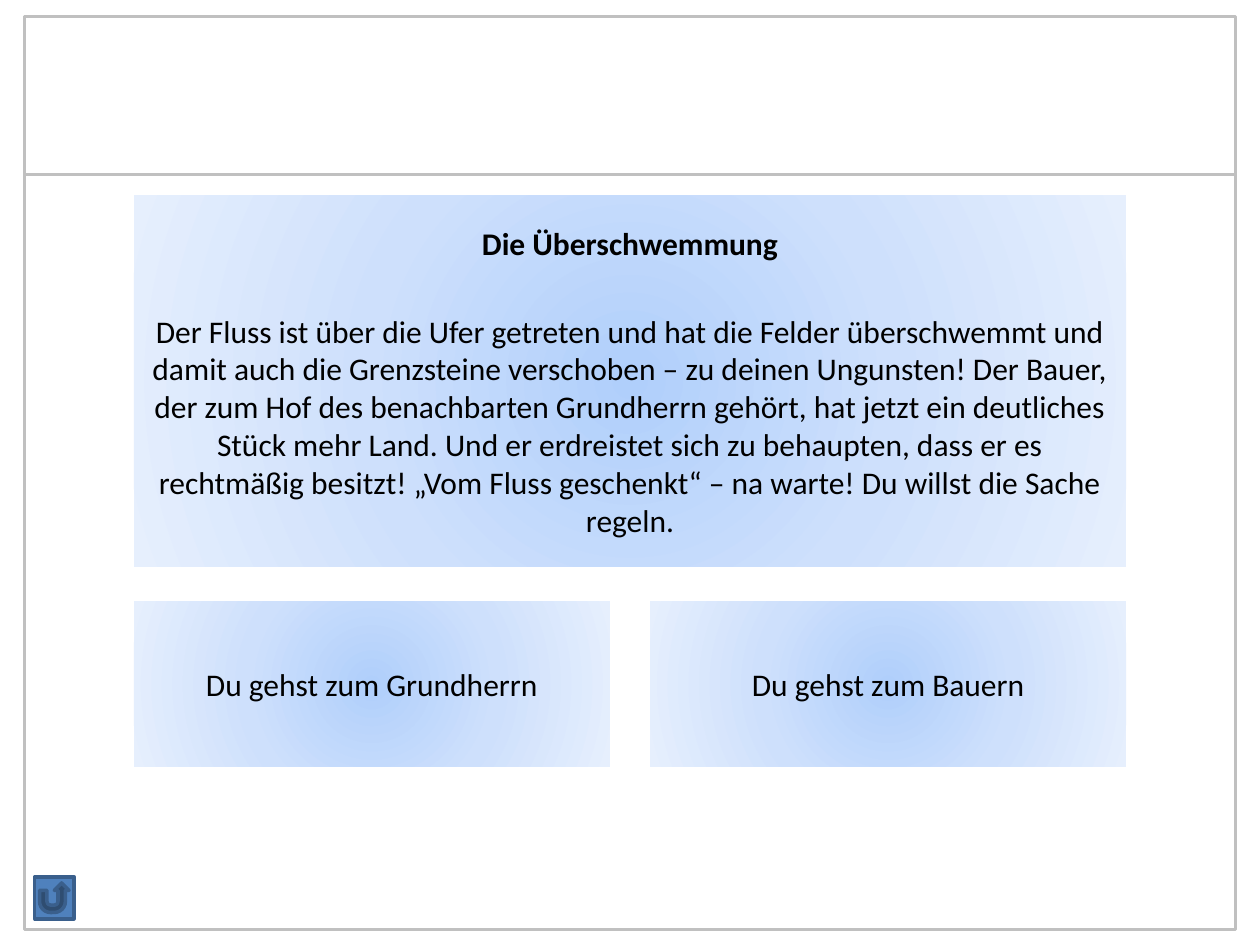
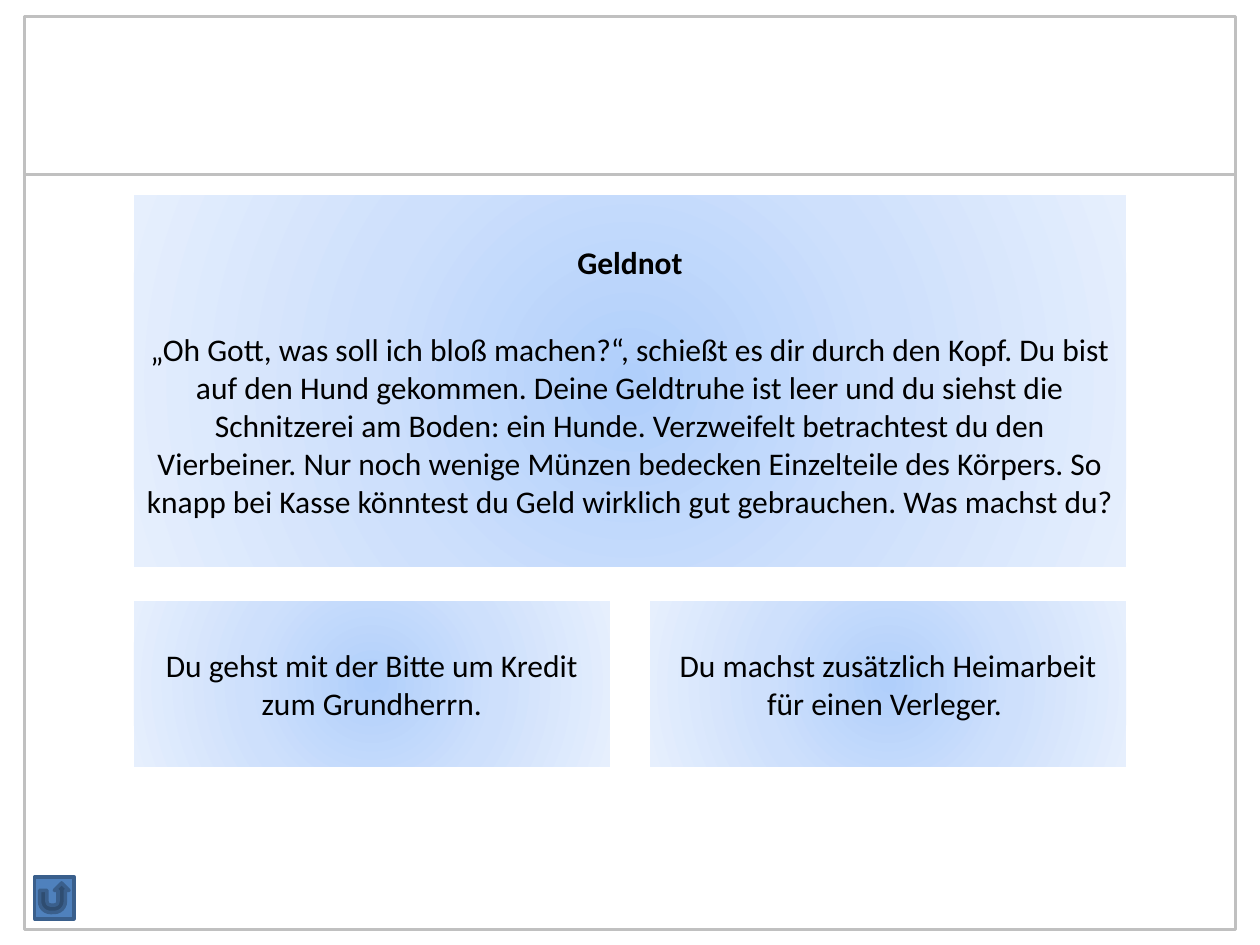
"""Builds two decision slides, each with a story card and two choices."""
from pptx import Presentation
from pptx.dml.color import RGBColor
from pptx.enum.shapes import MSO_SHAPE
from pptx.enum.text import MSO_ANCHOR, PP_ALIGN
from pptx.oxml import parse_xml
from pptx.oxml.ns import nsdecls
from pptx.util import Pt

RECT = MSO_SHAPE.RECTANGLE
BACK = MSO_SHAPE.ACTION_BUTTON_RETURN
MIDDLE = MSO_ANCHOR.MIDDLE
CENTER = PP_ALIGN.CENTER

SCENES = [
    {
        "title": "Die Überschwemmung",
        "story": "Der Fluss ist über die Ufer getreten und hat die Felder "
                 "überschwemmt und damit auch die Grenzsteine verschoben – zu "
                 "deinen Ungunsten! Der Bauer, der zum Hof des benachbarten "
                 "Grundherrn gehört, hat jetzt ein deutliches Stück mehr Land. "
                 "Und er erdreistet sich zu behaupten, dass er es rechtmäßig "
                 "besitzt! „Vom Fluss geschenkt“ – na warte! Du willst die "
                 "Sache regeln.",
        "picks": ["Du gehst zum Grundherrn", "Du gehst zum Bauern"],
    },
    {
        "title": "Geldnot",
        "story": "„Oh Gott, was soll ich bloß machen?“, schießt es dir durch "
                 "den Kopf. Du bist auf den Hund gekommen. Deine Geldtruhe ist "
                 "leer und du siehst die Schnitzerei am Boden: ein Hunde. "
                 "Verzweifelt betrachtest du den Vierbeiner. Nur noch wenige "
                 "Münzen bedecken Einzelteile des Körpers. So knapp bei Kasse "
                 "könntest du Geld wirklich gut gebrauchen. Was machst du?",
        "picks": ["Du gehst mit der Bitte um Kredit zum Grundherrn.",
                  "Du machst zusätzlich Heimarbeit für einen Verleger. "],
    },
]

COLORS = {"text": "000000", "frame": "C0C0C0", "button": "4F81BD",
          "edge": "3A5F8C"}
GLOW = [(0, "B0CFFB"), (50, "CEE0FC"), (100, "E6EFFD")]
FONT, SIZE, SPACE = "Calibri", 18, 28.6

EDGE, WIDE = 14.2, 691.6
BANDS = [(9.2, 90.6), (99.8, 431.2)]
LEFT, SPAN, GAP = 76.5, 567, 23
STORY = (111.5, 212.5)
PICK = (343.7, 94.5)
BUTTON = (19.8, 501, 22.5, 24)


def paint(name):
    return RGBColor.from_string(COLORS[name])


def shape(slide, kind, box):
    item = slide.shapes.add_shape(kind, *map(Pt, box))
    item.shadow.inherit = False
    return item


def rim(item, name, width):
    item.line.color.rgb = paint(name)
    item.line.width = Pt(width)


def glow(item):
    stops = "".join(f'<a:gs pos="{at * 1000}"><a:srgbClr val="{tint}"/></a:gs>'
                    for at, tint in GLOW)
    item.fill.background()
    old = item.element.spPr.find("{*}noFill")
    new = parse_xml(
        f'<a:gradFill {nsdecls("a")} rotWithShape="1"><a:gsLst>{stops}</a:gsLst>'
        '<a:path path="circle"><a:fillToRect l="50000" t="50000" r="50000" '
        'b="50000"/></a:path></a:gradFill>')
    old.getparent().replace(old, new)


def card(slide, box, text, title=None):
    item = shape(slide, RECT, box)
    glow(item)
    item.line.fill.background()
    frame = item.text_frame
    frame.word_wrap = True
    frame.vertical_anchor = MIDDLE
    frame.text = f"{title}\n{text}" if title else text
    for para in frame.paragraphs:
        para.alignment = CENTER
        font = para.runs[0].font
        font.name, font.size = FONT, Pt(SIZE)
        font.color.rgb = paint("text")
    if title:
        frame.paragraphs[0].runs[0].font.bold = True
        frame.paragraphs[1].space_before = Pt(SPACE)


def base(slide):
    for top, tall in BANDS:
        band = shape(slide, RECT, (EDGE, top, WIDE, tall))
        band.fill.background()
        rim(band, "frame", 1.75)


def button(slide):
    item = shape(slide, BACK, BUTTON)
    item.fill.solid()
    item.fill.fore_color.rgb = paint("button")
    rim(item, "edge", 2)


def build(slide, scene):
    base(slide)
    top, tall = STORY
    card(slide, (LEFT, top, SPAN, tall), scene["story"], scene["title"])
    top, tall = PICK
    count = len(scene["picks"])
    width = (SPAN - GAP * (count - 1)) / count
    for spot, text in enumerate(scene["picks"]):
        card(slide, (LEFT + spot * (width + GAP), top, width, tall), text)
    button(slide)


def main():
    deck = Presentation()
    deck.slide_width, deck.slide_height = Pt(720), Pt(540)
    for scene in SCENES:
        build(deck.slides.add_slide(deck.slide_layouts[6]), scene)
    deck.save("out.pptx")


if __name__ == "__main__":
    main()
